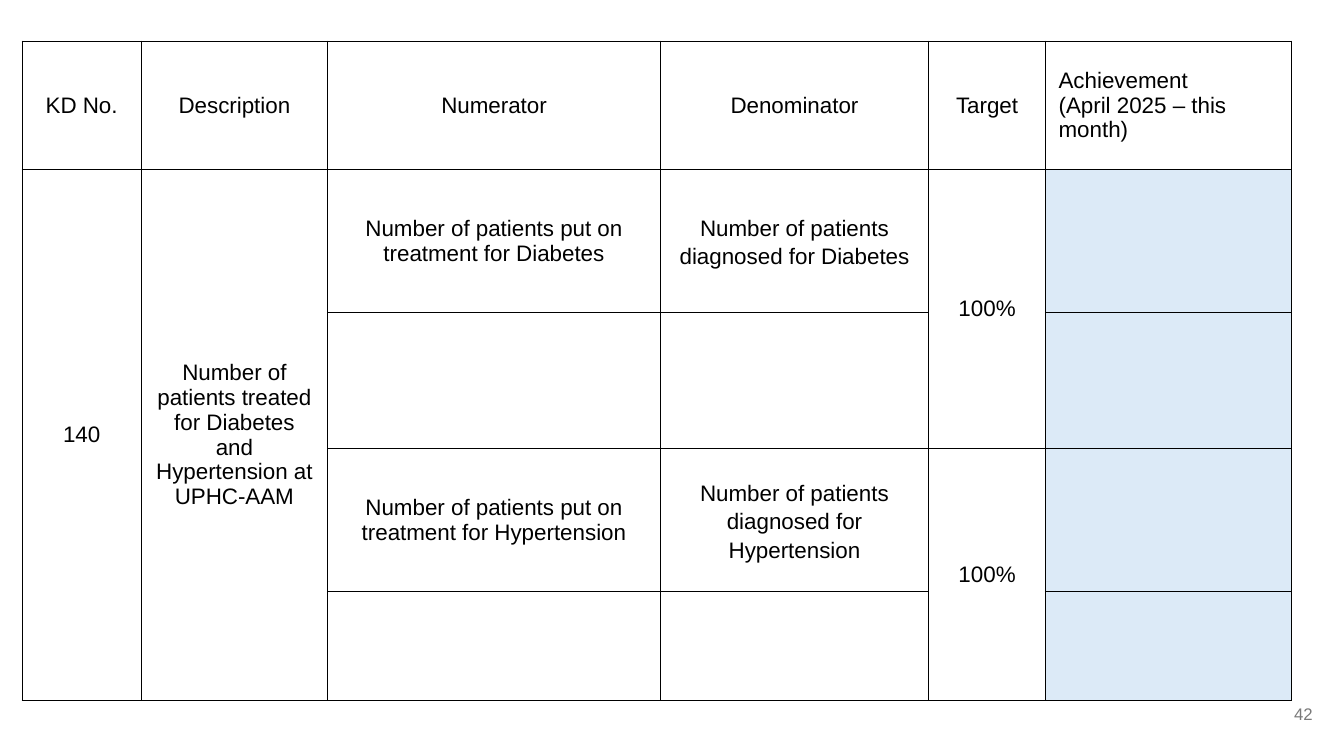
from lxml import etree
from pptx import Presentation
from pptx.dml.color import RGBColor
from pptx.enum.text import MSO_ANCHOR, PP_ALIGN
from pptx.oxml.ns import qn
from pptx.util import Inches, Pt

HEADINGS = ["KD No.", "Description", "Numerator", "Denominator", "Target",
            "Achievement\n(April 2025 – this month)"]
INDICATOR = ["140", "Number of patients treated for Diabetes and Hypertension at UPHC-AAM"]
CONDITIONS = ["Diabetes", "Hypertension"]
TARGET = "100%"
PAGE_NUMBER = "42"

COLORS = {"text": "000000", "border": "000000", "plain": "FFFFFF",
          "entry": "DCEAF7", "number": "797979"}
FONT = "Arial"
INSET = 0.13
LEFT, TOP = 0.22, 0.41
COLUMN_WIDTHS = [1.18, 1.85, 3.3, 2.66, 1.16, 2.44]
ROW_HEIGHTS = [1.27, 1.42, 1.35, 1.42, 1.08]
NUMERATOR, DENOMINATOR, TARGET_COLUMN, ACHIEVEMENT = range(2, 6)


def write(frame, content, size, color, align, spacing=None):
    frame.text = content
    for para in frame.paragraphs:
        para.alignment = align
        if spacing:
            para.line_spacing = spacing
        for span in para.runs:
            span.font.name = FONT
            span.font.size = Pt(size)
            span.font.color.rgb = RGBColor.from_string(COLORS[color])


def set_margins(box):
    """Give a cell or text frame equal insets and centre it vertically."""
    box.margin_left = box.margin_right = Inches(INSET)
    box.margin_top = box.margin_bottom = Inches(INSET)
    box.vertical_anchor = MSO_ANCHOR.MIDDLE


def add_borders(cell):
    properties = cell._tc.get_or_add_tcPr()
    for side in ("lnL", "lnR", "lnT", "lnB"):
        line = etree.SubElement(properties, qn(f"a:{side}"), w=str(Pt(1)))
        fill = etree.SubElement(line, qn("a:solidFill"))
        etree.SubElement(fill, qn("a:srgbClr"), val=COLORS["border"])


def cell_texts():
    """Map (row, column) to the wording of each filled cell."""
    texts = {(0, column): heading for column, heading in enumerate(HEADINGS)}
    texts.update({(1, column): words for column, words in enumerate(INDICATOR)})
    for index, condition in enumerate(CONDITIONS):
        row = 1 + 2 * index
        texts[row, NUMERATOR] = f"Number of patients put on treatment for {condition}"
        texts[row, DENOMINATOR] = f"Number of patients diagnosed for {condition}"
        texts[row, TARGET_COLUMN] = TARGET
    return texts


def add_indicator_table(page):
    rows, columns = len(ROW_HEIGHTS), len(COLUMN_WIDTHS)
    table = page.shapes.add_table(
        rows, columns, Inches(LEFT), Inches(TOP),
        Inches(sum(COLUMN_WIDTHS)), Inches(sum(ROW_HEIGHTS))).table
    table.first_row = table.horz_banding = False
    for column, width in zip(table.columns, COLUMN_WIDTHS):
        column.width = Inches(width)
    for row, height in zip(table.rows, ROW_HEIGHTS):
        row.height = Inches(height)

    texts = cell_texts()
    for row in range(rows):
        for column in range(columns):
            cell = table.cell(row, column)
            set_margins(cell)
            add_borders(cell)
            is_entry = row > 0 and column == ACHIEVEMENT
            cell.fill.solid()
            cell.fill.fore_color.rgb = RGBColor.from_string(
                COLORS["entry" if is_entry else "plain"])
            if (row, column) in texts:
                align = PP_ALIGN.LEFT if column == ACHIEVEMENT else PP_ALIGN.CENTER
                spacing = 1.15 if row > 0 and column == DENOMINATOR else None
                write(cell.text_frame, texts[row, column], 16, "text", align, spacing)

    for column in range(len(INDICATOR)):
        table.cell(1, column).merge(table.cell(rows - 1, column))
    for row in range(1, rows, 2):
        table.cell(row, TARGET_COLUMN).merge(table.cell(row + 1, TARGET_COLUMN))


def add_page_number(page):
    box = page.shapes.add_textbox(Inches(12.35), Inches(6.8), Inches(0.8), Inches(0.57))
    box.text_frame.word_wrap = True
    set_margins(box.text_frame)
    write(box.text_frame, PAGE_NUMBER, 12, "number", PP_ALIGN.RIGHT)


def main():
    deck = Presentation()
    deck.slide_width, deck.slide_height = Inches(13.33), Inches(7.5)
    page = deck.slides.add_slide(deck.slide_layouts[6])
    add_indicator_table(page)
    add_page_number(page)
    deck.save("out.pptx")


if __name__ == "__main__":
    main()
